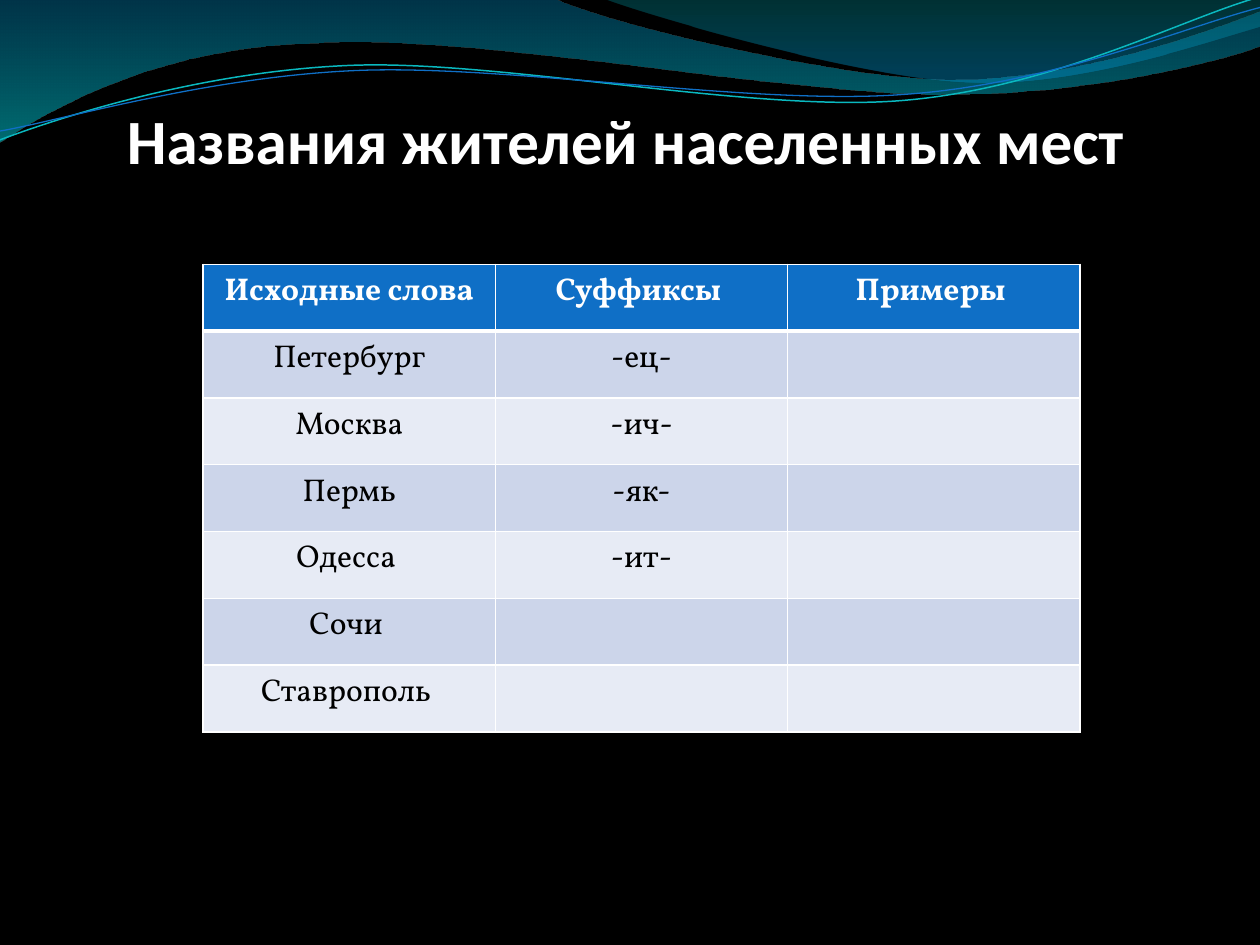
import math
from lxml import etree
from pptx import Presentation, util as u
from pptx.dml import color as c
from pptx.enum import text as t
from pptx.oxml import ns

COLORS = {
    "background": "000000", "text": "FFFFFF", "body": "000000",
    "header": "0F6FC6", "odd": "CCD5EA", "even": "E7EBF5", "border": "FFFFFF",
    "aqua": "0AB8BF", "blue": "0F6FC6",
}
TILT = 2.7  # degrees the thin strands lean to the left


def write(frame, content, size=18, font="Vollkorn", color="body", bold=False):
    para = frame.paragraphs[0]
    para.alignment = t.PP_ALIGN.CENTER
    span = para.add_run()
    span.text = content
    span.font.size = u.Pt(size)
    span.font.name = font
    span.font.bold = bold
    span.font.color.rgb = c.RGBColor.from_string(COLORS[color])


def draw_path(start, segments, closed):
    """Two numbers make a line, six numbers make a cubic curve."""
    points = [start] + [s[k:k + 2] for s in segments for k in range(0, len(s), 2)]
    points = [(u.Pt(x), u.Pt(y)) for x, y in points]
    builder = page.shapes.build_freeform(*points[0], scale=1.0)
    builder.add_line_segments(points[1:], close=closed)
    shape = builder.convert_to_shape()
    shape.shadow.inherit = False
    # Join each run of three points into one curve
    lines = iter(shape._element.xpath(".//a:lnTo"))
    for segment in segments:
        first = next(lines)
        if len(segment) == 6:
            first.tag = ns.qn("a:cubicBezTo")
            for extra in (next(lines), next(lines)):
                first.append(extra[0])
                extra.getparent().remove(extra)
    return shape


deck = Presentation()
deck.slide_width, deck.slide_height = u.Pt(720), u.Pt(540)
page = deck.slides.add_slide(deck.slide_layouts[6])
page.background.fill.solid()
page.background.fill.fore_color.rgb = c.RGBColor.from_string(COLORS["background"])

# Translucent waves: start, segments, gradient stops (position, colour, opacity %)
waves = [
    ((0, 0),
     [(316.8, -0.7),
      (342.7, 12.2, 478.1, 45.4, 545.8, 45.4), (614.2, 45.4, 689.8, 18.7, 720, 6.5),
      (720.7, 25.9),
      (707.8, 31.7, 626.4, 54.7, 537.1, 54), (447.8, 54, 275, 20.2, 185, 24.5),
      (92.9, 25.9, 33.1, 59.8, -0.7, 81.4), (0, 0)],
     [(0, "0074A1", 45), (1, "00C6CF", 55)]),
    ((344.9, -0.7),
     [(366.5, 7.9, 491, 44.6, 553.7, 46.8), (616.3, 49.7, 691.9, 23, 720, 15.1),
      (720, 0), (344.9, -0.7)],
     [(0, "00A1A9", 30), (0.8, "008BBF", 45)]),
]
for start, segments, stops in waves:
    wave = draw_path(start, segments, True)
    wave.line.fill.background()
    wave.fill.gradient()
    wave.fill.gradient_angle = 270
    for stop, (position, color, opacity) in zip(wave.fill.gradient_stops, stops):
        stop.position = position
        stop.color.rgb = c.RGBColor.from_string(color)
    for node, (position, color, opacity) in zip(
            wave._element.xpath(".//a:gs/a:srgbClr"), stops):
        etree.SubElement(node, ns.qn("a:alpha"), val=str(opacity * 1000))

# Thin strands: centre, start, colour, width, curves as they lie after the tilt
strands = [
    ((359.3, 41.4), (0, 79.9), "aqua", 0.85,
     [(34.6, 67, 113.8, 41, 199.4, 37.4), (284.4, 33.8, 427, 64.1, 513.4, 57.6),
      (599.8, 51.1, 675.4, 10.8, 718.6, -1.4)]),
    ((359.6, 42.5), (0, 74.9), "blue", 0.75,
     [(33.8, 69.1, 118.1, 43.9, 203.8, 40.3), (290.2, 36.7, 429.8, 60.5, 516.2, 54),
      (601.9, 48.2, 677.5, 15.1, 720, 4.3)]),
]
cosine, sine = math.cos(math.radians(TILT)), math.sin(math.radians(TILT))
for (middle_x, middle_y), start, color, width, segments in strands:
    level = []
    for part in [start] + segments:
        turned = []
        for x, y in zip(part[::2], part[1::2]):
            dx, dy = x - middle_x, y - middle_y
            turned += [middle_x + dx * cosine - dy * sine,
                       middle_y + dx * sine + dy * cosine]
        level.append(turned)
    strand = draw_path(level[0], level[1:], False)
    strand.rotation = 360 - TILT
    strand.fill.background()
    strand.line.width = u.Pt(width)
    strand.line.color.rgb = c.RGBColor.from_string(COLORS[color])

# Title
box = page.shapes.add_textbox(u.Pt(50.4), u.Pt(67.7), u.Pt(615.6), u.Pt(33.8))
frame = box.text_frame
frame.word_wrap = True
frame.vertical_anchor = t.MSO_ANCHOR.BOTTOM
frame.margin_left = frame.margin_top = frame.margin_bottom = 0
frame.margin_right = u.Pt(1.44)
write(frame, "Названия жителей населенных мест", size=36, font="Calibri",
      color="text", bold=True)

# Table
rows = [
    ("Исходные слова", "Суффиксы ", "Примеры "),
    ("Петербург", "-ец-", ""),
    ("Москва", "-ич-", ""),
    ("Пермь", "-як-", ""),
    ("Одесса ", "-ит-", ""),
    ("Сочи ", "", ""),
    ("Ставрополь ", "", ""),
]
table = page.shapes.add_table(len(rows), 3, u.Pt(116.1), u.Pt(151),
                              u.Pt(501), u.Pt(267.4)).table
for column in table.columns:
    column.width = u.Pt(167)
for row in table.rows:
    row.height = u.Pt(38.2)

for i, row in enumerate(rows):
    fill = "header" if i == 0 else "odd" if i % 2 else "even"
    for j, content in enumerate(row):
        cell = table.cell(i, j)
        if content:
            write(cell.text_frame, content, color="body" if i else "text", bold=i == 0)
        cell.fill.solid()
        cell.fill.fore_color.rgb = c.RGBColor.from_string(COLORS[fill])
        # White borders, heavier under the header
        properties = cell._tc.get_or_add_tcPr()
        for order, side in enumerate("LRTB"):
            heavy = (i, side) in ((0, "B"), (1, "T"))
            border = etree.Element(ns.qn("a:ln" + side), w=str(u.Pt(3 if heavy else 1)))
            solid = etree.SubElement(border, ns.qn("a:solidFill"))
            etree.SubElement(solid, ns.qn("a:srgbClr"), val=COLORS["border"])
            properties.insert(order, border)

deck.save("out.pptx")
